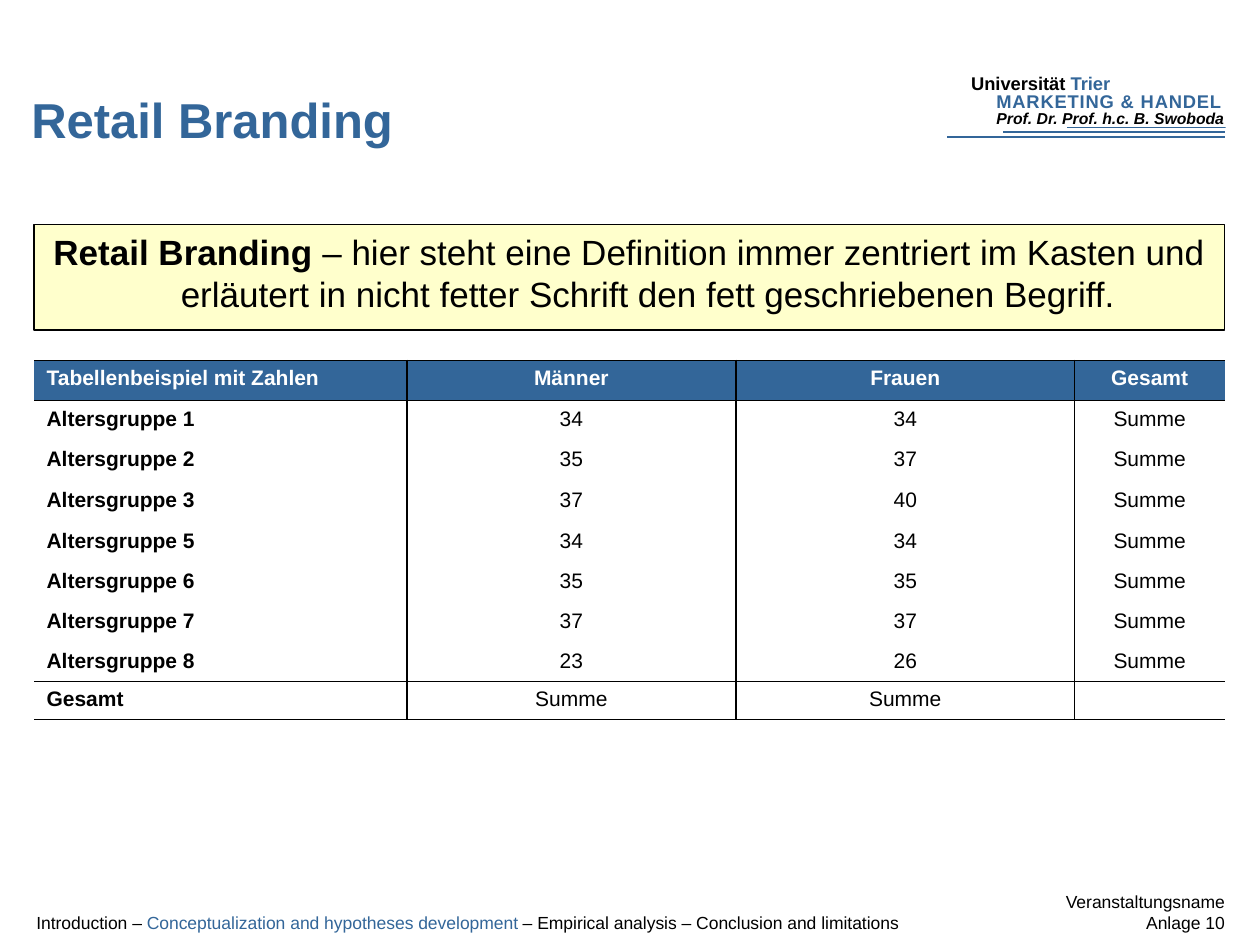
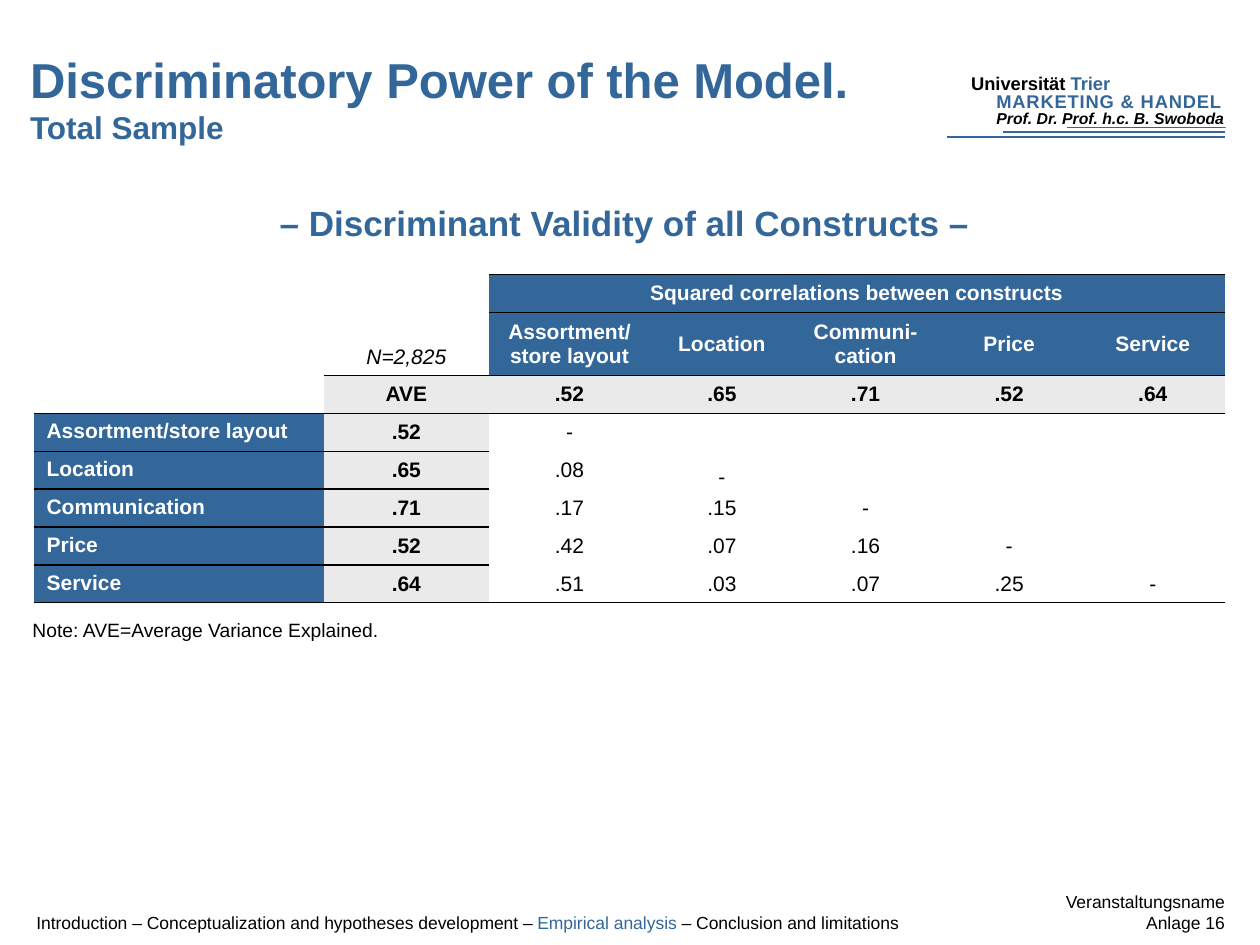
from dataclasses import dataclass

from lxml import etree
from pptx import Presentation
from pptx.dml.color import RGBColor
from pptx.enum import shapes, text
from pptx.oxml import ns
from pptx.util import Inches, Pt


@dataclass(frozen=True)
class Theme:
    font: str = "Arial"
    blue: str = "336699"
    black: str = "000000"
    white: str = "FFFFFF"
    yellow: str = "FFFFCC"
    gray: str = "EAEAEA"
    title: float = 28
    heading: float = 20
    subtitle: float = 18
    table: float = 12
    note: float = 11
    brand: float = 10.5
    footer: float = 10
    chair: float = 9


theme = Theme()
LEFT, CENTER, RIGHT = text.PP_ALIGN.LEFT, text.PP_ALIGN.CENTER, text.PP_ALIGN.RIGHT
TOP, MIDDLE, BOTTOM = text.MSO_ANCHOR.TOP, text.MSO_ANCHOR.MIDDLE, text.MSO_ANCHOR.BOTTOM
NO_TABLE_STYLE = "{2D5ABB26-0587-4C30-8999-92F81FD0307C}"


def write(frame, paragraphs, align=LEFT, anchor=TOP, wrap=True, **base):
    """Fill a frame with paragraphs, each a list of (text, format overrides)."""
    frame.word_wrap, frame.vertical_anchor = wrap, anchor
    for index, spans in enumerate(paragraphs):
        para = frame.add_paragraph() if index else frame.paragraphs[0]
        para.alignment = align
        for words, changes in spans:
            span = para.add_run()
            span.text = words
            look = {"name": theme.font, "color": theme.black, **base, **changes}
            span.font.color.rgb = RGBColor.from_string(look.pop("color"))
            look["size"] = Pt(look["size"])
            for key, value in look.items():
                setattr(span.font, key, value)


def finish_cell(cell, fill, edges):
    """Set the fill and the edge widths in points, keyed L, R, T, B."""
    if fill:
        cell.fill.solid()
        cell.fill.fore_color.rgb = RGBColor.from_string(fill)
    else:
        cell.fill.background()
    properties = cell._tc.get_or_add_tcPr()
    for index, side in enumerate("LRTB"):
        width = edges.get(side, 0)
        line = etree.Element(ns.qn(f"a:ln{side}"), w=str(Pt(width)))
        paint = etree.SubElement(line, ns.qn("a:solidFill" if width else "a:noFill"))
        if width:
            etree.SubElement(paint, ns.qn("a:srgbClr"), val=theme.black)
        properties.insert(index, line)
    if not cell.text_frame.text:
        etree.SubElement(cell.text_frame.paragraphs[0]._p, ns.qn("a:endParaRPr"),
                         sz=str(int(theme.table * 100)))


deck = Presentation()
deck.slide_width, deck.slide_height = Inches(10), Inches(7.5)

# Shared frame: letterhead, title, agenda footer and page label
agenda = ["Introduction", "Conceptualization and hypotheses development",
          "Empirical analysis", "Conclusion and limitations"]
frames = [
    (0.15, 0.2, [[("Retail Branding", {})]], 1, 10),
    (0.14, 0.18, [[("Discriminatory Power of the Model.", {})],
                  [("Total Sample", {"size": theme.subtitle})]], 2, 16),
]
letterhead_lines = [(7.52, 9.76, 1.09, 1), (9.77, 7.96, 1.05, 1), (9.73, 8.47, 1.01, 0.5)]
letterhead_texts = [
    (7.61, 0.52, 2.27, 0.29, [("Universität ", {}), ("Trier", {"color": theme.blue})],
     {"size": theme.brand}),
    (7.81, 0.67, 2.46, 0.29, [("MARKETING & HANDEL", {"color": theme.blue})],
     {"size": theme.brand}),
    (7.81, 0.81, 2.85, 0.25, [("Prof. Dr. Prof. h.c. B. Swoboda", {})],
     {"size": theme.chair, "italic": True}),
]
line_ends = [(9.76, 1.04, 0.12, 0.21), (9.74, 1.02, 0.16, 0.23)]

pages = []
for title_left, title_top, title, current, number in frames:
    page = deck.slides.add_slide(deck.slide_layouts[6])
    pages.append(page)

    for start, end, y, width in letterhead_lines:
        rule = page.shapes.add_connector(shapes.MSO_CONNECTOR.STRAIGHT, Inches(start),
                                         Inches(y), Inches(end), Inches(y))
        rule.line.color.rgb = RGBColor.from_string(theme.blue)
        rule.line.width = Pt(width)
        etree.SubElement(rule._element.spPr, ns.qn("a:effectLst"))
    for place in line_ends:
        cover = page.shapes.add_shape(shapes.MSO_SHAPE.RECTANGLE, *map(Inches, place))
        cover.shadow.inherit = False
        cover.fill.solid()
        cover.fill.fore_color.rgb = RGBColor.from_string(theme.white)
        cover.line.color.rgb = RGBColor.from_string(theme.white)
        cover.line.width = Pt(2)
    for *place, spans, look in letterhead_texts:
        box = page.shapes.add_textbox(*map(Inches, place))
        write(box.text_frame, [spans], bold=True, **look)
        if spans[0][0].isupper():
            box.text_frame.paragraphs[0].runs[0].font._element.set("spc", "50")

    box = page.shapes.add_textbox(Inches(title_left), Inches(title_top), Inches(7.21), Inches(1.03))
    write(box.text_frame, title, anchor=BOTTOM, size=theme.title, bold=True, color=theme.blue)

    box = page.shapes.add_textbox(Inches(0.19), Inches(7.12), Inches(8.24), Inches(0.4))
    before = "".join(f"{topic} – " for topic in agenda[:current])
    after = "".join(f" – {topic}" for topic in agenda[current + 1:])
    write(box.text_frame, [[(before, {}), (agenda[current], {"color": theme.blue}), (after, {})]],
          anchor=MIDDLE, size=theme.footer)

    box = page.shapes.add_textbox(Inches(7.52), Inches(7.07), Inches(2.2), Inches(0.34))
    for side in ("left", "top", "right", "bottom"):
        setattr(box.text_frame, f"margin_{side}", 0)
    write(box.text_frame, [[("Veranstaltungsname", {})], [(f"Anlage {number}", {})]],
          align=RIGHT, size=theme.footer)

definition_page, validity_page = pages

# Definition
box = definition_page.shapes.add_shape(shapes.MSO_SHAPE.RECTANGLE, Inches(0.27), Inches(1.78),
                                       Inches(9.45), Inches(0.84))
box.shadow.inherit = False
box.fill.solid()
box.fill.fore_color.rgb = RGBColor.from_string(theme.yellow)
box.line.color.rgb = RGBColor.from_string(theme.black)
box.line.width = Pt(0.75)
write(box.text_frame, [[
    ("Retail Branding ", {"bold": True}),
    ("– hier steht eine Definition immer zentriert im Kasten und erläutert in nicht fetter "
     "Schrift den fett geschriebenen Begriff.", {})]], align=CENTER, size=theme.heading)
hanging = box.text_frame.paragraphs[0]._p.get_or_add_pPr()
hanging.set("marL", str(Inches(0.3)))
hanging.set("indent", str(-Inches(0.3)))

# Both tables: place, column widths, row heights, content
age_rows = [
    ["Tabellenbeispiel mit Zahlen", "Männer", "Frauen", "Gesamt"],
    ["Altersgruppe 1", "34", "34", "Summe"],
    ["Altersgruppe 2", "35", "37", "Summe"],
    ["Altersgruppe 3", "37", "40", "Summe"],
    ["Altersgruppe 5", "34", "34", "Summe"],
    ["Altersgruppe 6", "35", "35", "Summe"],
    ["Altersgruppe 7", "37", "37", "Summe"],
    ["Altersgruppe 8", "23", "26", "Summe"],
    ["Gesamt", "Summe", "Summe", ""],
]
validity_rows = [
    ["", "", "Squared correlations between constructs", "", "", "", ""],
    ["", "N=2,825", "Assortment/ store layout", "Location", "Communi-cation", "Price", "Service"],
    ["", "AVE", ".52", ".65", ".71", ".52", ".64"],
    ["Assortment/store layout", ".52", "-", "", "", "", ""],
    ["Location", ".65", ".08", "-", "", "", ""],
    ["Communication", ".71", ".17", ".15", "-", "", ""],
    ["Price", ".52", ".42", ".07", ".16", "-", ""],
    ["Service", ".64", ".51", ".03", ".07", ".25", "-"],
]
table_plans = [
    (definition_page, 2.86, [2.96, 2.61, 2.69, 1.19],
     [0.32, 0.32, 0.33] + [0.32] * 4 + [0.3, 0.29], age_rows),
    (validity_page, 2.18, [2.3, 1.31, 1.28] + [1.14] * 4,
     [0.3, 0.5, 0.3, 0.3, 0.29, 0.3, 0.3, 0.3], validity_rows),
]
tables = []
for page, top, widths, heights, rows in table_plans:
    holder = page.shapes.add_table(len(rows), len(widths), Inches(0.27), Inches(top),
                                   Inches(sum(widths)), Inches(sum(heights)))
    table = holder.table
    table.first_row = table.horz_banding = False
    table._tbl.tblPr.find(ns.qn("a:tableStyleId")).text = NO_TABLE_STYLE
    for column, width in zip(table.columns, widths):
        column.width = Inches(width)
    for row, height in zip(table.rows, heights):
        row.height = Inches(height)
    tables.append(table)
age_table, validity_table = tables

# Age groups by gender
last_row, last_column = len(age_rows) - 1, len(age_rows[0]) - 1
for r, row in enumerate(age_rows):
    for c, words in enumerate(row):
        cell = age_table.cell(r, c)
        if words:
            write(cell.text_frame, [[(words, {})]], align=CENTER if c else LEFT,
                  size=theme.table, bold=r == 0 or c == 0,
                  color=theme.black if r else theme.white)
        fill = theme.blue if r == 0 else None if c else theme.white
        finish_cell(cell, fill, {"L": int(c > 0), "R": int(c < last_column),
                                 "T": int(r in (0, 1, last_row)),
                                 "B": int(r in (0, last_row - 1, last_row))})

# Discriminant validity
ruled_rows = {0: range(2, 8), 1: range(1, 8)}  # first column: rows with a line below
validity_table.cell(0, 2).merge(validity_table.cell(0, 6))
for r, row in enumerate(validity_rows):
    for c, words in enumerate(row):
        cell = validity_table.cell(r, c)
        is_heading = (r < 2 and c > 1) or (r > 2 and c == 0)
        is_ave = (r == 2 and c > 0) or (r > 2 and c == 1)
        is_sample = (r, c) == (1, 1)
        if r > 1 and c > 0:
            cell.margin_left = cell.margin_right = Inches(0.06)
            cell.margin_top = cell.margin_bottom = 0
        if words:
            write(cell.text_frame, [[(words, {})]], align=CENTER if c else LEFT,
                  size=theme.table, bold=is_heading or is_ave, italic=is_sample,
                  color=theme.white if is_heading else theme.black)
            if is_sample or (r, c) == (4, 3):
                cell.vertical_anchor = BOTTOM
            else:
                cell.vertical_anchor = MIDDLE if r and c else TOP
        below = ruled_rows.get(c, (0, 1, 2, 7))
        width = 0.75 if c > 1 and r > 1 else 1
        above_width = 0.75 if c > 1 and r > 2 else 1
        has_top = r - 1 in below or (r == 0 and c > 1)
        fill = theme.blue if is_heading else theme.gray if is_ave else None
        finish_cell(cell, fill, {"T": above_width if has_top else 0,
                                 "B": width if r in below else 0})

box = validity_page.shapes.add_textbox(Inches(0.16), Inches(4.86), Inches(3), Inches(0.27))
write(box.text_frame, [[("Note: AVE=Average Variance Explained.", {})]], wrap=False,
      size=theme.note)
box = validity_page.shapes.add_textbox(Inches(0.27), Inches(1.55), Inches(9.45), Inches(0.44))
write(box.text_frame, [[("– Discriminant Validity of all Constructs – ", {})]], align=CENTER,
      size=theme.heading, bold=True, color=theme.blue)

deck.save("out.pptx")
